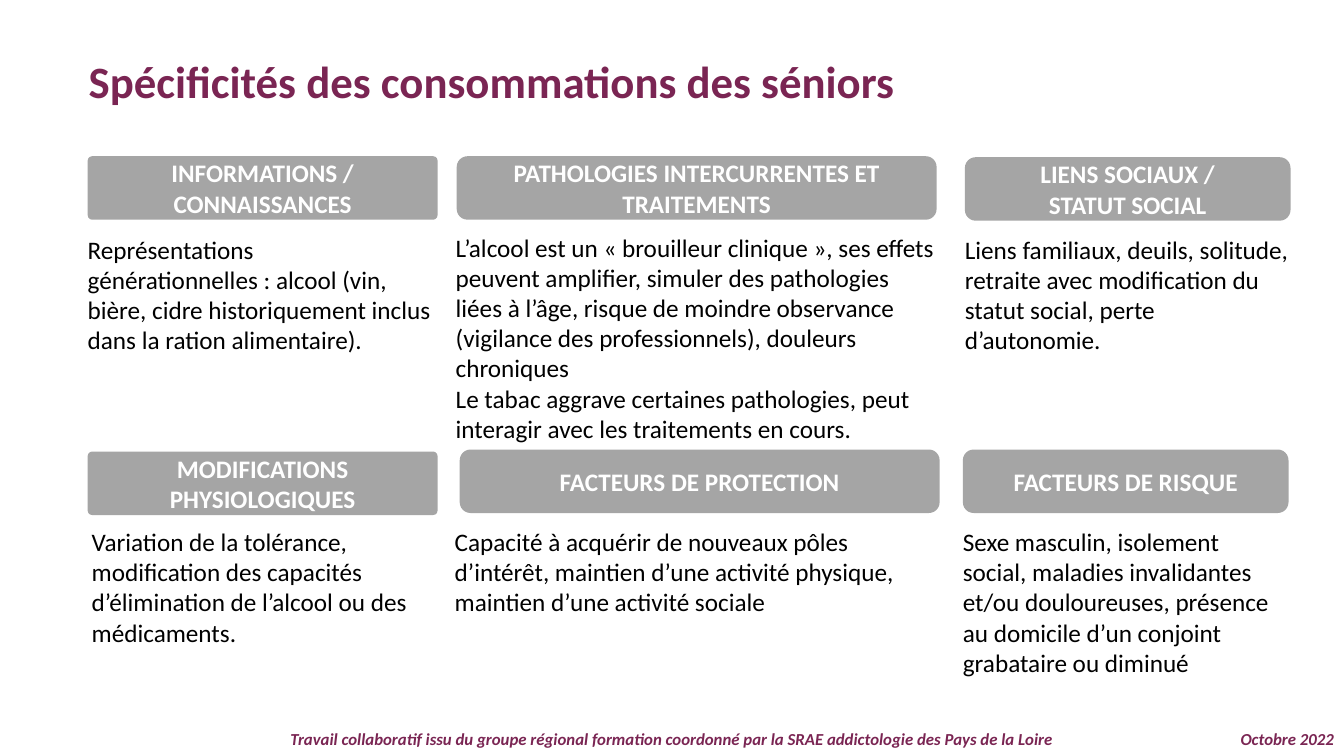
from dataclasses import dataclass

from pptx import Presentation
from pptx import util as u
from pptx.dml.color import RGBColor
from pptx.enum import shapes, text


@dataclass(frozen=True)
class Theme:
    font: str = "Calibri"
    accent: RGBColor = RGBColor(0x7A, 0x25, 0x53)
    heading_fill: RGBColor = RGBColor(0xA5, 0xA5, 0xA5)
    light: RGBColor = RGBColor(0xFF, 0xFF, 0xFF)
    dark: RGBColor = RGBColor(0, 0, 0)
    title_size: int = 32
    text_size: int = 18
    footer_size: int = 12


class SlideBuilder:
    def __init__(self, slide, theme):
        self.slide = slide
        self.theme = theme

    def set_text(self, shape, lines, size, color, align, bold=False, italic=False):
        frame = shape.text_frame
        frame.word_wrap = True
        frame.text = "\n".join(lines)
        for paragraph in frame.paragraphs:
            paragraph.alignment = align
            font = paragraph.font
            font.name, font.size = self.theme.font, u.Pt(size)
            font.bold, font.italic = bold, italic
            font.color.rgb = color
        return frame

    def text_box(self, box):
        return self.slide.shapes.add_textbox(*map(u.Inches, box))

    def title(self, box, line):
        title = self.slide.shapes.title
        title.left, title.top, title.width, title.height = map(u.Inches, box)
        frame = self.set_text(title, [line], self.theme.title_size, self.theme.accent,
                              text.PP_ALIGN.LEFT, bold=True)
        frame.vertical_anchor = text.MSO_ANCHOR.TOP
        frame.auto_size = text.MSO_AUTO_SIZE.NONE

    def heading(self, box, lines, rounding):
        shape = self.slide.shapes.add_shape(
            shapes.MSO_SHAPE.ROUNDED_RECTANGLE, *map(u.Inches, box))
        shape.adjustments[0] = rounding
        shape.shadow.inherit = False
        shape.fill.solid()
        shape.fill.fore_color.rgb = self.theme.heading_fill
        shape.line.fill.background()
        frame = self.set_text(shape, lines, self.theme.text_size, self.theme.light,
                              text.PP_ALIGN.CENTER, bold=True)
        frame.vertical_anchor = text.MSO_ANCHOR.MIDDLE

    def body(self, box, lines):
        frame = self.set_text(self.text_box(box), lines, self.theme.text_size,
                              self.theme.dark, text.PP_ALIGN.LEFT)
        frame.margin_left = frame.margin_right = 0
        frame.margin_top = frame.margin_bottom = 0
        frame.paragraphs[-1].space_after = u.Pt(16)

    def footer(self, box, line, align):
        frame = self.set_text(self.text_box(box), [line], self.theme.footer_size,
                              self.theme.accent, align, bold=True, italic=True)
        frame.paragraphs[0].line_spacing = 0.9


HEADING_HEIGHT = 0.63
COLUMN_WIDTHS = (3.47, 4.76, 3.23)
ROUNDINGS = (0.07, 0.17, 0.17)

# Rows of topics: heading position and lines, body position, height and lines
TOPIC_ROWS = [
    [
        ((0.87, 1.55), ["INFORMATIONS / CONNAISSANCES"], (0.87, 2.32), 0.88,
         ["Représentations générationnelles : alcool (vin, bière, cidre "
          "historiquement inclus dans la ration alimentaire)."]),
        ((4.53, 1.55), ["PATHOLOGIES INTERCURRENTES ET TRAITEMENTS"], (4.52, 2.3), 1.36,
         ["L’alcool est un « brouilleur clinique », ses effets peuvent amplifier, "
          "simuler des pathologies liées à l’âge, risque de moindre observance "
          "(vigilance des professionnels), douleurs chroniques",
          "Le tabac aggrave certaines pathologies, peut interagir avec les "
          "traitements en cours."]),
        ((9.57, 1.56), ["LIENS SOCIAUX /", "STATUT SOCIAL"], (9.57, 2.32), 1.15,
         ["Liens familiaux, deuils, solitude, retraite avec modification du "
          "statut social, perte d’autonomie."]),
    ],
    [
        ((0.87, 4.48), ["MODIFICATIONS PHYSIOLOGIQUES"], (0.91, 5.22), 0.63,
         ["Variation de la tolérance, modification des capacités d’élimination "
          "de l’alcool ou des médicaments."]),
        ((4.56, 4.46), ["FACTEURS DE PROTECTION"], (4.51, 5.22), 0.63,
         ["Capacité à acquérir de nouveaux pôles d’intérêt, maintien d’une "
          "activité physique, maintien d’une activité sociale"]),
        ((9.55, 4.46), ["FACTEURS DE RISQUE"], (9.55, 5.22), 0.83,
         ["Sexe masculin, isolement social, maladies invalidantes et/ou "
          "douloureuses, présence au domicile d’un conjoint grabataire ou diminué"]),
    ],
]


def main():
    presentation = Presentation()
    presentation.slide_width = u.Inches(13.33)
    presentation.slide_height = u.Inches(7.5)
    title_only = presentation.slide_layouts[5]
    builder = SlideBuilder(presentation.slides.add_slide(title_only), Theme())

    # Footer
    builder.footer((0, 7.2, 13.33, 0.3),
                   "Travail collaboratif issu du groupe régional formation coordonné "
                   "par la SRAE addictologie des Pays de la Loire",
                   text.PP_ALIGN.CENTER)
    builder.footer((11.89, 7.2, 1.44, 0.3), "Octobre 2022", text.PP_ALIGN.RIGHT)

    # Title
    builder.title((0.78, 0.48, 8.25, 0.64), "Spécificités des consommations des séniors")

    # Topics
    for row in TOPIC_ROWS:
        for topic, width, rounding in zip(row, COLUMN_WIDTHS, ROUNDINGS):
            heading_at, heading, body_at, body_height, body = topic
            builder.heading((*heading_at, width, HEADING_HEIGHT), heading, rounding)
            builder.body((*body_at, width, body_height), body)

    presentation.save("out.pptx")


if __name__ == "__main__":
    main()
